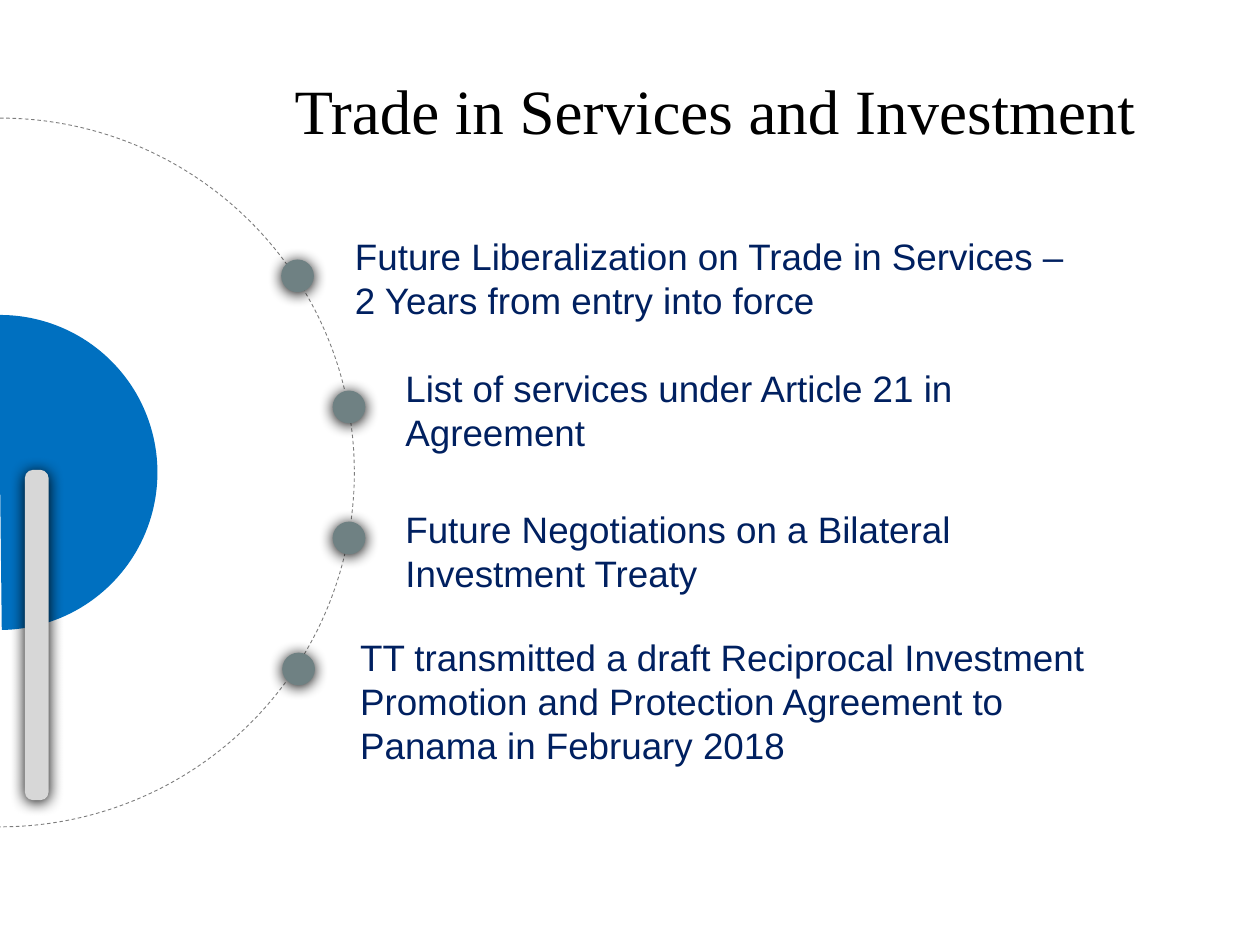
"""Build the slide on trade in services and investment."""
from dataclasses import dataclass
from typing import Any, Optional

from lxml import etree
from pptx import Presentation
from pptx import util as u
from pptx.dml.color import RGBColor as Rgb
from pptx.enum import dml, shapes, text
from pptx.oxml import ns


@dataclass(frozen=True)
class Theme:
    body: str = "Arial"
    head: str = "Times New Roman"
    body_size: float = 21
    head_size: float = 36
    navy: str = "002060"
    black: str = "000000"
    white: str = "FFFFFF"
    blue: str = "0070C0"
    slate: str = "6F8183"
    silver: str = "D7D7D7"
    gray: str = "7D7D7D"


@dataclass(frozen=True)
class Box:
    left: float
    top: float
    width: float
    height: float

    def pts(self) -> tuple:
        return tuple(u.Pt(n) for n in (self.left, self.top, self.width, self.height))


@dataclass(frozen=True)
class Point:
    words: str
    dot: float
    left: float
    top: float
    height: float = 58.3


THEME = Theme()
MID = 270
DOT = 18.72
STEP = 74.88
POINTS = (
    Point("Future Liberalization on Trade in Services – 2 Years from entry into force",
          160.7, 195.8, 129.6),
    Point("List of services under Article 21 in Agreement", 190.1, 224.6, 205.2),
    Point("Future Negotiations on a Bilateral Investment Treaty", 190.1, 224.6, 285.8),
    Point("TT transmitted a draft Reciprocal Investment Promotion and Protection "
          "Agreement to Panama in February 2018", 161.3, 198.7, 358.6, 83.5),
)


def write(page: Any, words: str, box: Box, *, font: str, size: float, tint: str,
          anchor: Any = text.MSO_ANCHOR.TOP) -> None:
    frame = page.shapes.add_textbox(*box.pts()).text_frame
    frame.word_wrap = True
    frame.auto_size = text.MSO_AUTO_SIZE.SHAPE_TO_FIT_TEXT
    frame.vertical_anchor = anchor
    run = frame.paragraphs[0].add_run()
    run.text = words
    run.font.name = font
    run.font.size = u.Pt(size)
    run.font.color.rgb = Rgb.from_string(tint)


def draw(page: Any, kind: Any, box: Box, fill: str, *, line: Optional[str] = None,
         adjust: tuple = (), glow: bool = False) -> None:
    shape = page.shapes.add_shape(kind, *box.pts())
    for i, value in enumerate(adjust):
        shape.adjustments[i] = value
    shape.fill.solid()
    shape.fill.fore_color.rgb = Rgb.from_string(fill)
    if line:
        shape.line.color.rgb = Rgb.from_string(line)
        shape.line.width = u.Pt(0.5)
        shape.line.dash_style = dml.MSO_LINE.DASH
    else:
        shape.line.fill.background()
    shape.shadow.inherit = False
    if glow:
        shade(shape)


def shade(shape: Any) -> None:
    effects = shape._element.spPr.find(ns.qn("a:effectLst"))
    outer = etree.SubElement(effects, ns.qn("a:outerShdw"), blurRad=str(u.Pt(8.5)),
                             dist=str(u.Pt(1)), dir="5400000", rotWithShape="0")
    etree.SubElement(outer, ns.qn("a:srgbClr"), val=THEME.black)


def disc(page: Any, size: float, fill: str, end: float,
         line: Optional[str] = None) -> None:
    box = Box(-size / 2, MID - size / 2, size, size)
    draw(page, shapes.MSO_SHAPE.ARC, box, fill, line=line, adjust=(162, end))


def main() -> None:
    deck = Presentation()
    deck.slide_width, deck.slide_height = u.Pt(720), u.Pt(540)
    page = deck.slides.add_slide(deck.slide_layouts[6])

    disc(page, 405, THEME.white, 54.07, THEME.gray)
    for i, point in enumerate(POINTS):
        write(page, point.words, Box(point.left, point.top, 432, point.height),
              font=THEME.body, size=THEME.body_size, tint=THEME.navy,
              anchor=text.MSO_ANCHOR.MIDDLE)
        top = MID + (i - (len(POINTS) - 1) / 2) * STEP - DOT / 2
        draw(page, shapes.MSO_SHAPE.OVAL, Box(point.dot, top, DOT, DOT),
             THEME.slate, glow=True)
    disc(page, 180, THEME.blue, 53.6)
    draw(page, shapes.MSO_SHAPE.ROUNDED_RECTANGLE, Box(14.2, 268.5, 13.6, 188.8),
         THEME.silver, adjust=(0.35,), glow=True)
    write(page, "Trade in Services and Investment", Box(161.3, 37.4, 558.7, 51.1),
          font=THEME.head, size=THEME.head_size, tint=THEME.black)
    deck.save("out.pptx")


if __name__ == "__main__":
    main()
